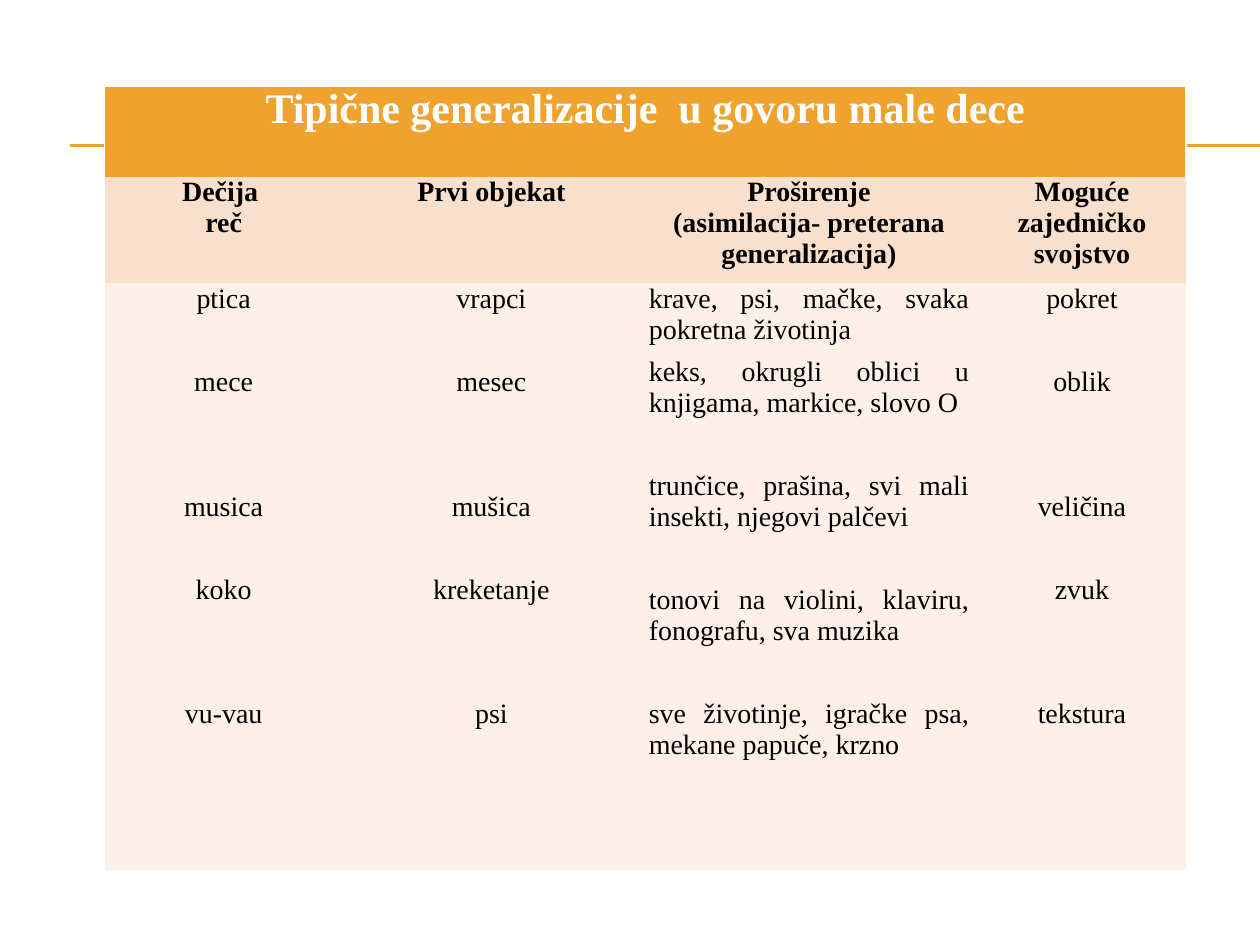
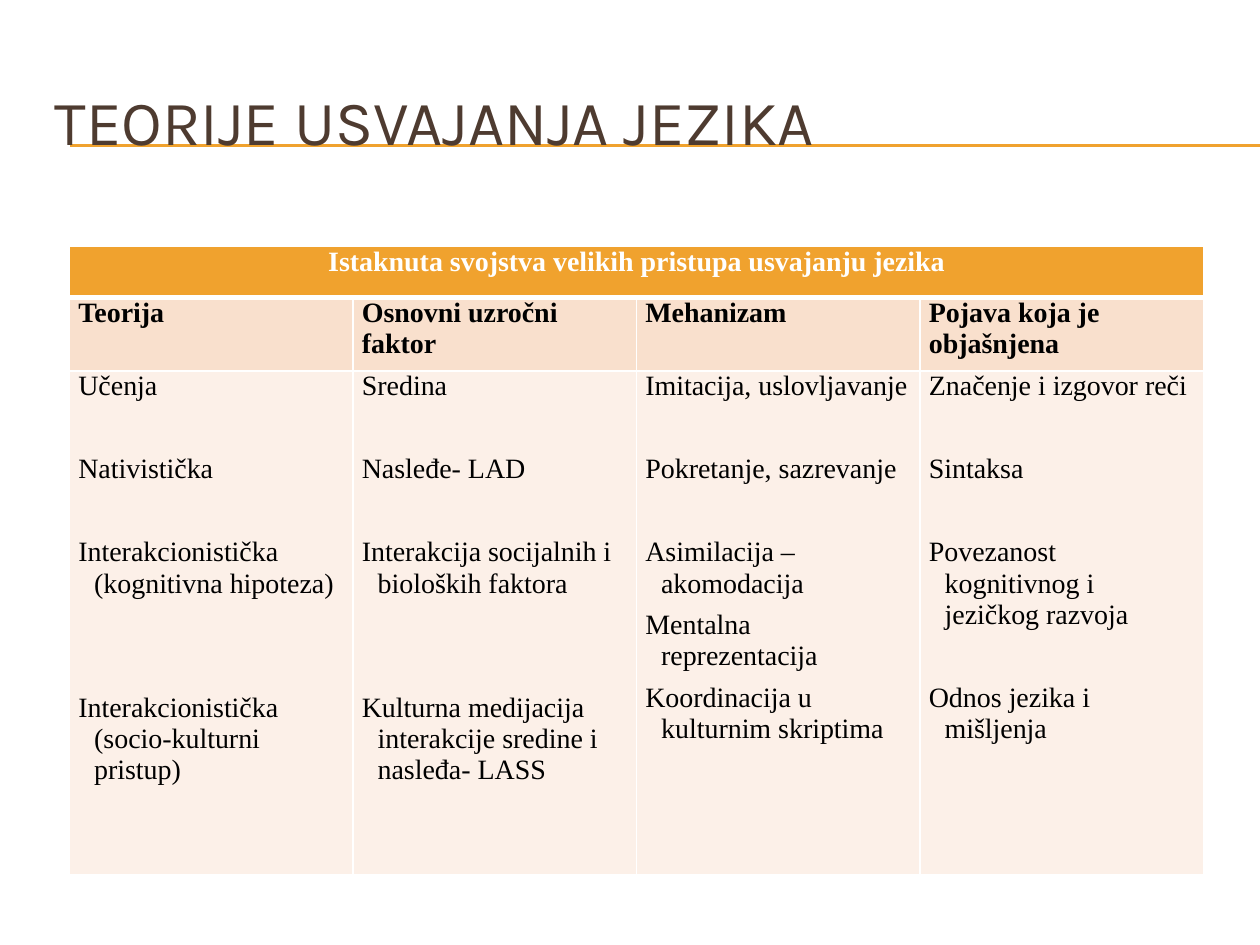
from dataclasses import dataclass

from lxml.etree import SubElement
from pptx import Presentation
from pptx.dml.color import RGBColor
from pptx.enum.shapes import MSO_CONNECTOR
from pptx.enum.text import MSO_ANCHOR, PP_ALIGN
from pptx.oxml.ns import qn
from pptx.util import Pt

ORANGE, PEACH, CREAM = "F0A22E", "F9E0CD", "FCF0E8"
WHITE, BLACK, BROWN = "FFFFFF", "000000", "4E3B30"
TABLE_FONT, TITLE_FONT = "Times New Roman", "Karla"
PLAIN_TABLE = "{2D5ABB26-0587-4C30-8999-92F81FD0307C}"
LINE_HEIGHT = 17.7
CENTER, LEFT, JUSTIFY = PP_ALIGN.CENTER, PP_ALIGN.LEFT, PP_ALIGN.JUSTIFY


@dataclass
class TextStyle:
    """Look of the paragraphs in one kind of cell."""
    align: int = LEFT
    size: float = 16
    color: str = BLACK
    bold: bool = False
    before: float = 0
    after: float = 0
    hanging: float = 0


def rgb(value):
    """Turn a hex string into a colour."""
    return RGBColor.from_string(value)


def add_rules(page):
    """Draw the pair of thin rules that every slide shares."""
    for y in (82.8, 83.5):
        rule = page.shapes.add_connector(
            MSO_CONNECTOR.STRAIGHT, Pt(40.3), Pt(y), Pt(720), Pt(y))
        rule.line.color.rgb = rgb(ORANGE)
        rule.line.width = Pt(0.75)
        SubElement(rule.element.spPr, qn("a:effectLst"))


def add_title(page, text, box):
    """Place the slide title in front of the rules."""
    title = page.shapes.title
    title.left, title.top, title.width, title.height = map(Pt, box)
    frame = title.text_frame
    frame.text = text
    frame.vertical_anchor = MSO_ANCHOR.MIDDLE
    para = frame.paragraphs[0]
    para.alignment = LEFT
    font = para.font
    font.name, font.size, font.color.rgb = TITLE_FONT, Pt(36), rgb(BROWN)
    page.shapes.element.append(title.element)


def set_borders(cell, widths):
    """Give a cell white borders, with widths keyed by L, R, T and B."""
    properties = cell._tc.get_or_add_tcPr()
    for side, width in widths.items():
        line = SubElement(properties, qn(f"a:ln{side}"), w=str(Pt(width)))
        fill = SubElement(line, qn("a:solidFill"))
        SubElement(fill, qn("a:srgbClr"), val=WHITE)


def fill_cell(cell, texts, style, color, gaps=None):
    """Write paragraphs into a cell; gaps counts the empty lines above each."""
    cell.margin_left = cell.margin_right = Pt(5)
    cell.margin_top = cell.margin_bottom = 0
    cell.fill.solid()
    cell.fill.fore_color.rgb = rgb(color)
    empty_line = LINE_HEIGHT + style.before + style.after
    frame = cell.text_frame
    for index, text in enumerate(texts):
        para = frame.add_paragraph() if index else frame.paragraphs[0]
        para.text = text
        para.alignment = style.align
        gap = gaps[index] if gaps else 0
        para.space_before = Pt(style.before + gap * empty_line)
        para.space_after = Pt(style.after)
        if style.hanging:
            properties = para._p.get_or_add_pPr()
            properties.set("marL", str(Pt(style.hanging)))
            properties.set("indent", str(-Pt(style.hanging)))
        font = para.font
        font.name, font.size, font.bold = TABLE_FONT, Pt(style.size), style.bold
        font.color.rgb = rgb(style.color)


def add_overview(page, origin, columns, rows, heading, heading_style,
                 header_style, content, borders):
    """Build a table of a merged heading, a header row and one body row."""
    left, top = origin
    frame = page.shapes.add_table(
        len(rows), len(columns), Pt(left), Pt(top), Pt(sum(columns)), Pt(sum(rows)))
    table = frame.table
    table._tbl.tblPr.find(qn("a:tableStyleId")).text = PLAIN_TABLE
    for column, width in zip(table.columns, columns):
        column.width = Pt(width)
    for index, (row, height) in enumerate(zip(table.rows, rows)):
        row.height = Pt(height)
        for cell in row.cells:
            set_borders(cell, borders[index])
    table.cell(0, 0).merge(table.cell(0, len(columns) - 1))
    fill_cell(table.cell(0, 0), [heading], heading_style, ORANGE)
    for index, (header, texts, gaps, style) in enumerate(content):
        fill_cell(table.cell(1, index), header, header_style, PEACH)
        fill_cell(table.cell(2, index), texts, style, CREAM, gaps)


def build_generalizations(deck):
    """Build the slide on generalizations in the speech of small children."""
    page = deck.slides.add_slide(deck.slide_layouts[6])
    add_rules(page)
    centered = TextStyle(CENTER, before=3, after=3)
    justified = TextStyle(JUSTIFY, before=3, after=3)
    word_gaps = [0, 1, 2, 1, 2]
    content = [
        (["Dečija ", "reč"],
         ["ptica", "mece", "musica", "koko", "vu-vau"], word_gaps, centered),
        (["Prvi objekat"],
         ["vrapci", "mesec", "mušica", "kreketanje", "psi"], word_gaps, centered),
        (["Proširenje", "(asimilacija- preterana generalizacija)"],
         ["krave, psi, mačke, svaka pokretna životinja",
          "keks, okrugli oblici u knjigama, markice, slovo O",
          "trunčice, prašina, svi mali insekti, njegovi palčevi",
          "tonovi na violini, klaviru, fonografu, sva muzika",
          "sve životinje, igračke psa, mekane papuče, krzno"],
         [0, 0, 1, 1, 1], justified),
        (["Moguće zajedničko svojstvo"],
         ["pokret", "oblik", "veličina", "zvuk", "tekstura"], word_gaps, centered),
    ]
    add_overview(
        page, (59.8, 49), [136, 170, 193, 119], [52, 61, 335],
        "Tipične generalizacije  u govoru male dece",
        TextStyle(CENTER, 24, WHITE, True, after=2),
        TextStyle(CENTER, bold=True), content,
        [dict(L=1, R=1, T=1), {}, {}])


def build_theories(deck):
    """Build the slide on theories of language acquisition."""
    page = deck.slides.add_slide(deck.slide_layouts[5])
    add_rules(page)
    add_title(page, "TEORIJE USVAJANJA JEZIKA", (24, 36, 684, 66))
    hanging = TextStyle(after=6, hanging=9)
    content = [
        (["Teorija"],
         ["Učenja", "Nativistička", "Interakcionistička (kognitivna hipoteza)",
          "Interakcionistička (socio-kulturni pristup)"], [0, 1, 1, 2], hanging),
        (["Osnovni uzročni faktor"],
         ["Sredina", "Nasleđe- LAD", "Interakcija socijalnih i bioloških faktora",
          "Kulturna medijacija interakcije sredine i nasleđa- LASS"],
         [0, 1, 1, 2], hanging),
        (["Mehanizam"],
         ["Imitacija, uslovljavanje", "Pokretanje, sazrevanje",
          "Asimilacija – akomodacija", "Mentalna reprezentacija",
          "Koordinacija u kulturnim skriptima"], [0, 1, 1, 0, 0], hanging),
        (["Pojava koja je objašnjena"],
         ["Značenje i izgovor reči", "Sintaksa",
          "Povezanost kognitivnog i jezičkog razvoja",
          "Odnos jezika i mišljenja"], [0, 1, 1, 1], hanging),
    ]
    grid = dict(L=1, R=1, T=1, B=1)
    add_overview(
        page, (39.8, 140.6), [162] * 4, [29.5, 41.8, 288],
        "Istaknuta svojstva velikih pristupa usvajanju jezika",
        TextStyle(CENTER, 16, WHITE, True, 3, 3),
        TextStyle(bold=True, before=3, after=3), content,
        [grid | dict(B=3), grid | dict(T=3), grid])


def main():
    """Build and save the deck."""
    deck = Presentation()
    deck.slide_width, deck.slide_height = Pt(720), Pt(540)
    build_generalizations(deck)
    build_theories(deck)
    deck.save("out.pptx")


if __name__ == "__main__":
    main()
